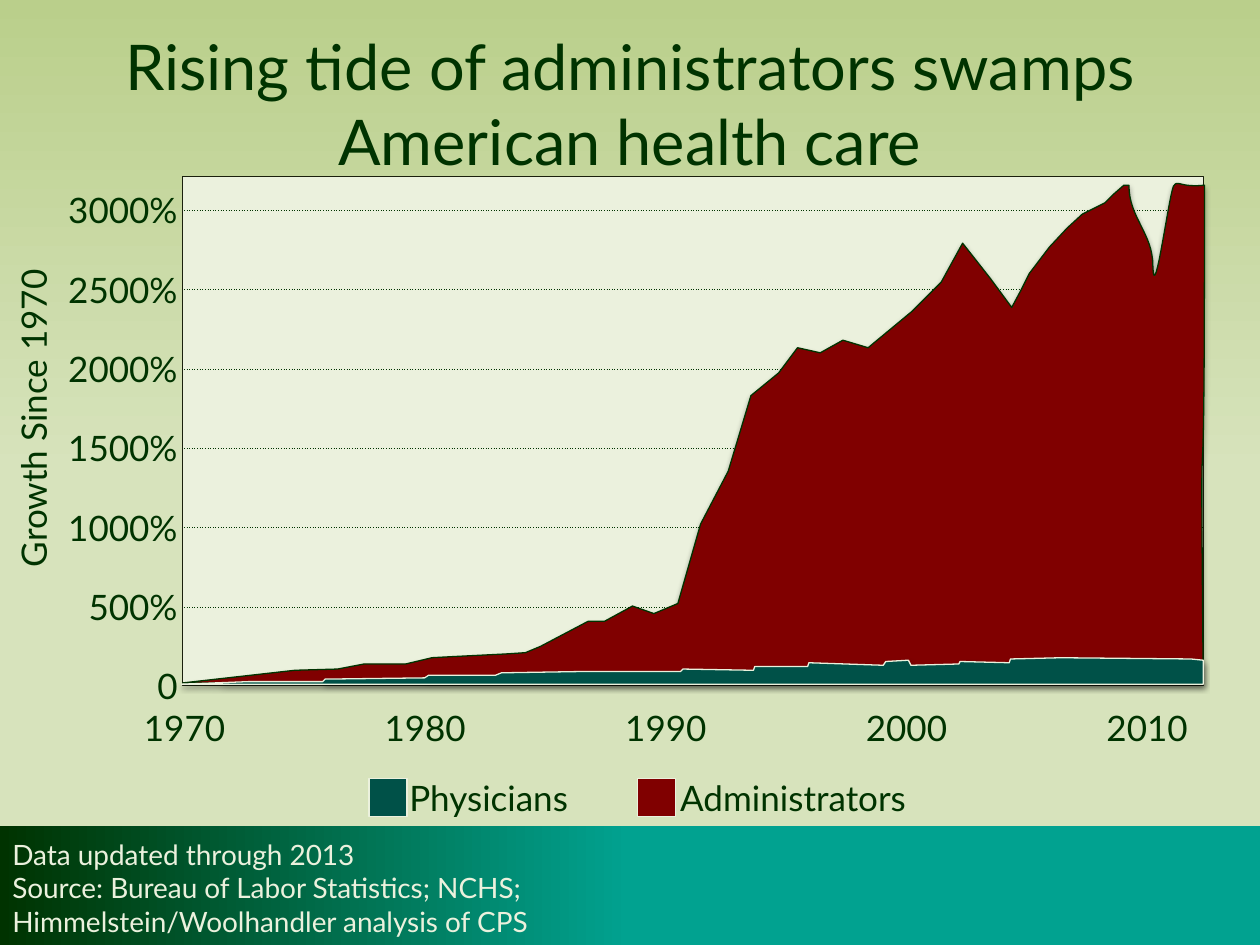
from copy import deepcopy
from lxml import etree
from pptx import Presentation
from pptx import util as u
from pptx.dml.color import RGBColor
from pptx.enum import dml, shapes, text
from pptx.oxml import parse_xml
from pptx.oxml.ns import qn

DARK = RGBColor(0x00, 0x33, 0x00)
PALE = RGBColor(0xEB, 0xF1, 0xDD)
EDGE = RGBColor(0x1A, 0x20, 0x0D)
TEAL = RGBColor(0x00, 0x51, 0x48)
RED = RGBColor(0x80, 0x00, 0x00)
AQUA = RGBColor(0x01, 0xA2, 0x90)
MOSS = RGBColor(0xBA, 0xCF, 0x8B)
SAGE = RGBColor(0xD7, 0xE3, 0xBC)
MIST = RGBColor(0xD8, 0xE4, 0xBC)
FONT = "Lato"
NS = 'xmlns:a="http://schemas.openxmlformats.org/drawingml/2006/main"'
PLAIN = "{2D5ABB26-0587-4C30-8999-92F81FD0307C}"
ALIGN = text.PP_ALIGN
STEP = 0.63

ADMIN = [
    (0, 0), (0.89, 0.1), (1.23, 0.11), (1.44, 0.15), (1.77, 0.15), (1.98, 0.2),
    (2.17, 0.21), (2.57, 0.23), (2.72, 0.24), (2.84, 0.29), (3.22, 0.49),
    (3.35, 0.49), (3.57, 0.61), (3.74, 0.55), (3.93, 0.63), (4.11, 1.26),
    (4.33, 1.68), (4.51, 2.28), (4.73, 2.46), (4.88, 2.66), (5.06, 2.62),
    (5.24, 2.72), (5.44, 2.66), (5.79, 2.95), (6.02, 3.18), (6.19, 3.49),
    (6.41, 3.21), (6.58, 2.98), (6.65, 3.11), (6.72, 3.25), (6.88, 3.46),
    (7.02, 3.61), (7.14, 3.72), (7.32, 3.81), (7.39, 3.88), (7.47, 3.95),
    (7.51, 3.95)]
CURVES = [
    [(7.51, 3.69), (7.7, 3.57), (7.7, 3.31)],
    [(7.71, 2.95), (7.84, 3.97), (7.87, 3.95)],
    [(7.9, 3.99), (7.92, 3.93), (8.11, 3.95)],
    [(8.11, 0.23), (8.07, 3.25), (8.1, 0)]]
DOCS = [
    (0, 0), (8.11, 0), (8.11, 0.19), (8.01, 0.2), (6.98, 0.21), (6.58, 0.2),
    (6.57, 0.17), (6.18, 0.18), (6.17, 0.16), (5.79, 0.15), (5.77, 0.19),
    (5.59, 0.18), (5.57, 0.15), (4.98, 0.17), (4.97, 0.14), (4.55, 0.14),
    (4.54, 0.11), (3.98, 0.12), (3.96, 0.1), (3.15, 0.1), (2.54, 0.09),
    (2.49, 0.07), (1.96, 0.07), (1.93, 0.05), (1.14, 0.04), (1.12, 0.02),
    (0.53, 0.02)]


def inch(box):
    return [u.Inches(v) for v in box]


def blend(fill, root, stops, angle):
    fill.gradient()
    fill.gradient_angle = angle
    group = root.xpath(".//a:gsLst")[0]
    while len(group) < len(stops):
        group.append(deepcopy(group[0]))
    for stop, (place, color) in zip(fill.gradient_stops, stops):
        stop.position = place
        stop.color.rgb = color


def paint(shape, fill, line):
    shape.shadow.inherit = False
    shape.fill.solid()
    shape.fill.fore_color.rgb = fill
    shape.line.color.rgb = line
    shape.line.width = u.Pt(0.75)


def rect(slide, box):
    shape = slide.shapes.add_shape(shapes.MSO_SHAPE.RECTANGLE, *inch(box))
    shape.shadow.inherit = False
    return shape


def write(frame, lines, size=20, color=DARK, align=ALIGN.LEFT):
    frame.text = "\n".join(lines)
    for para in frame.paragraphs:
        para.alignment = align
        look = {"name": FONT, "size": u.Pt(size)}
        for key, value in look.items():
            setattr(para.runs[0].font, key, value)
        para.runs[0].font.color.rgb = color


def label(slide, box, lines, anchor=text.MSO_ANCHOR.TOP, turn=0, **style):
    shape = slide.shapes.add_textbox(*inch(box))
    shape.rotation = turn
    shape.text_frame.word_wrap = True
    shape.text_frame.vertical_anchor = anchor
    write(shape.text_frame, lines, **style)


def grid(slide, box, rows, cols):
    frame = slide.shapes.add_table(rows, cols, *inch(box))
    table = frame.table
    table.first_row = table.horz_banding = False
    table._tbl.tblPr.find(qn("a:tableStyleId")).text = PLAIN
    for cell in table.iter_cells():
        cell.fill.background()
    return table


def rules(slide, box):
    for cell in grid(slide, box, 5, 1).iter_cells():
        props = cell._tc.get_or_add_tcPr()
        for spot, side in enumerate(("lnT", "lnB")):
            props.insert(spot, parse_xml(
                f'<a:{side} {NS} w="9525"><a:solidFill><a:srgbClr val="{DARK}"/>'
                f'</a:solidFill><a:prstDash val="sysDot"/></a:{side}>'))


def scale(slide, box, names, rows, cols, align):
    table = grid(slide, box, rows, cols)
    for cell, name in zip(table.iter_cells(), names):
        write(cell.text_frame, [name], align=align)


def bend(start, ctrl, count=16):
    for i in range(1, count + 1):
        t = i / count
        mix = ((1 - t) ** 3, 3 * t * (1 - t) ** 2, 3 * t * t * (1 - t), t ** 3)
        yield tuple(sum(m * p[k] for m, p in zip(mix, [start, *ctrl]))
                    for k in (0, 1))


def area(slide, left, base, points, fill, line):
    spots = [(u.Inches(left + x), u.Inches(base - y)) for x, y in points]
    pen = slide.shapes.build_freeform(*spots[0], scale=1.0)
    pen.add_line_segments(spots[1:], close=True)
    shape = pen.convert_to_shape()
    paint(shape, fill, line)
    glow = shape._element.spPr.find(qn("a:effectLst"))
    shade = etree.SubElement(glow, qn("a:outerShdw"), blurRad="39370",
                             dist="25400", dir="5400000", rotWithShape="0")
    tone = etree.SubElement(shade, qn("a:srgbClr"), val="000000")
    etree.SubElement(tone, qn("a:alpha"), val="38000")


def footer(slide, box):
    left, top, wide, high = box
    band = rect(slide, box)
    band.line.fill.background()
    blend(band.fill, band._element, [(0, DARK), (0.5, AQUA), (1, AQUA)], 0)
    label(slide, (left, top + 0.03, wide * 0.63, high - 0.03),
          ["Data updated through 2013",
           "Source: Bureau of Labor Statistics; NCHS; "
           "Himmelstein/Woolhandler analysis of CPS"],
          anchor=text.MSO_ANCHOR.MIDDLE, size=16, color=PALE)


def legend(slide, box):
    left, top, wide, high = box
    for shift, gap, name, color in ((0, 0.22, "Physicians", TEAL),
                                    (2.13, 0.24, "Administrators", RED)):
        paint(rect(slide, (left + shift, top + 0.07, 0.3, 0.3)), color, PALE)
        label(slide, (left + shift + gap, top, wide / 2, high), [name])


def plot(slide, box):
    left, top, wide, high = box
    base = top + high
    paint(rect(slide, box), PALE, EDGE)
    rules(slide, (left + 0.01, top + 0.27, wide - 0.01, 5 * STEP))
    label(slide, (left - 2.47, top + 1.7, 2.57, 0.44), ["Growth Since 1970"],
          turn=270, align=ALIGN.CENTER)
    marks = [f"{n}%" for n in range(3000, 0, -500)] + ["0"]
    scale(slide, (left - 1.11, top + 0.05, 1.17, 7 * STEP), marks, 7, 1, ALIGN.RIGHT)
    years = [str(n) for n in range(1970, 2011, 10)]
    scale(slide, (left - 0.94, base + 0.12, 5 * 1.91, 0.41), years, 1, 5, ALIGN.CENTER)
    tide = list(ADMIN)
    for ctrl in CURVES:
        tide.extend(list(bend(tide[-1], ctrl)))
    area(slide, left, base - 0.02, tide, RED, DARK)
    area(slide, left - 0.01, base - 0.01, DOCS, TEAL, PALE)


def main():
    deck = Presentation()
    deck.slide_width, deck.slide_height = inch((10, 7.5))
    slide = deck.slides.add_slide(deck.slide_layouts[6])
    blend(slide.background.fill, slide._element,
          [(0, MOSS), (0.5, SAGE), (1, MIST)], 270)
    footer(slide, (0, 6.56, 10, 0.94))
    label(slide, (0, 0.19, 10, 1.25),
          ["Rising tide of administrators swamps American health care"],
          anchor=text.MSO_ANCHOR.MIDDLE, size=36, align=ALIGN.CENTER)
    plot(slide, (1.45, 1.4, 8.1, 4.04))
    legend(slide, (2.93, 6.11, 5, 0.44))
    deck.save("out.pptx")


if __name__ == "__main__":
    main()
